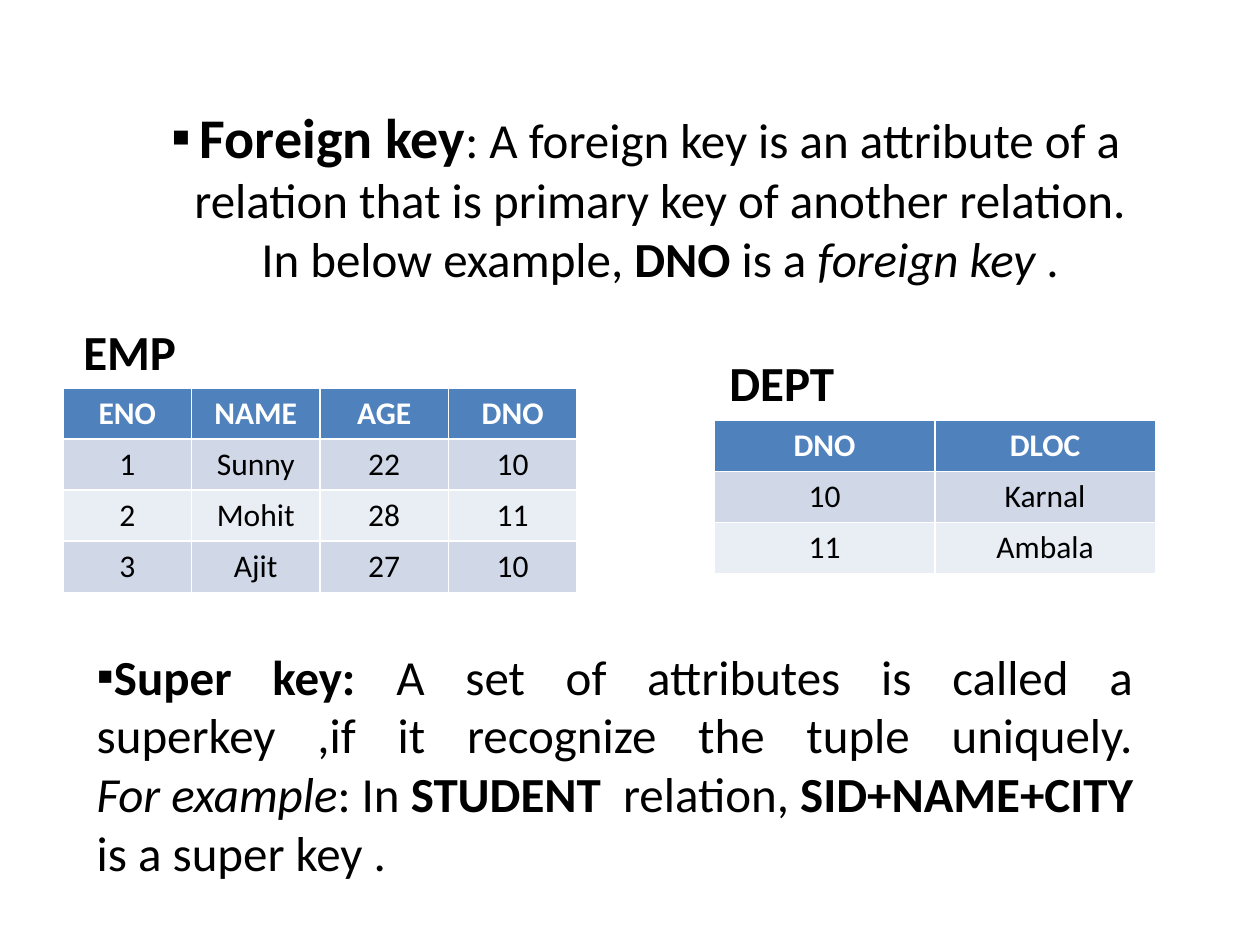
from lxml import etree
from pptx import Presentation
from pptx import util as u
from pptx.dml.color import RGBColor
from pptx.enum import text as t
from pptx.oxml.ns import qn

FONT = "Calibri"
BLACK, WHITE = "000000", "FFFFFF"
HEAD, ODD, EVEN = "4F81BD", "D0D8E8", "E9EDF4"
MID, JUST = t.PP_ALIGN.CENTER, t.PP_ALIGN.JUSTIFY


def color(code):
    return RGBColor.from_string(code)


def write(par, words, size=28, bold=False, ital=False, ink=BLACK):
    """Add words to a paragraph; a newline becomes a line break."""
    for i, line in enumerate(words.split("\n")):
        if i:
            par.add_line_break()
        if not line:
            continue
        run = par.add_run()
        run.text = line
        font = run.font
        font.name, font.size = FONT, u.Pt(size)
        font.bold, font.italic = bold, ital
        font.color.rgb = color(ink)


def bullet(par, hang=0):
    """Give a paragraph a square bullet with a hanging indent in cm."""
    props = par._p.get_or_add_pPr()
    props.set("marL", str(u.Cm(hang)))
    props.set("indent", str(-u.Cm(hang)))
    etree.SubElement(props, qn("a:buFont")).set("typeface", "Arial")
    etree.SubElement(props, qn("a:buChar")).set("char", "▪")


def prose(slide, box, parts, align=MID, anchor=t.MSO_ANCHOR.TOP, wrap=True):
    """Place one paragraph of (words, format) parts and return it."""
    frame = slide.shapes.add_textbox(*map(u.Cm, box)).text_frame
    frame.word_wrap, frame.vertical_anchor = wrap, anchor
    par = frame.paragraphs[0]
    par.alignment = align
    for words, form in parts:
        write(par, words, **form)
    return par


def grid(slide, box, rows):
    """Place a banded table with equal columns and rows."""
    left, top, width, high = box
    tall, wide = len(rows), len(rows[0])
    table = slide.shapes.add_table(tall, wide, *map(u.Cm, box)).table
    for col in table.columns:
        col.width = u.Cm(width / wide)
    for r, row in enumerate(rows):
        table.rows[r].height = u.Cm(high / tall)
        fill = HEAD if r == 0 else ODD if r % 2 else EVEN
        for c, words in enumerate(row):
            cell = table.cell(r, c)
            cell.fill.solid()
            cell.fill.fore_color.rgb = color(fill)
            par = cell.text_frame.paragraphs[0]
            par.alignment = MID
            write(par, words, size=18, bold=r == 0, ink=BLACK if r else WHITE)


def main():
    deck = Presentation()
    deck.slide_width, deck.slide_height = u.Cm(25.4), u.Cm(19.05)
    slide = deck.slides.add_slide(deck.slide_layouts[6])
    bold, ital = {"bold": True}, {"ital": True}

    # Foreign key definition
    par = prose(slide, (1.9, 1.95, 22.23, 3.97), [
        ("Foreign key", {"bold": True, "size": 32}),
        (": A foreign key is an attribute of a relation that is primary key "
         "of another relation.\nIn below example, ", {}),
        ("DNO", bold), (" is a ", {}), ("foreign key ", ital), (".", {}),
    ], anchor=t.MSO_ANCHOR.MIDDLE)
    bullet(par, 0.58)

    # Example relations
    grid(slide, (1.27, 7.82, 10.36, 4.12), [
        ("ENO", "NAME", "AGE", "DNO"),
        ("1", "Sunny", "22", "10"),
        ("2", "Mohit", "28", "11"),
        ("3", "Ajit", "27", "10"),
    ])
    grid(slide, (14.4, 8.47, 8.89, 3.09), [
        ("DNO", "DLOC"), ("10", "Karnal"), ("11", "Ambala"),
    ])
    prose(slide, (1.27, 6.35, 2.69, 1.45), [("EMP", bold)], wrap=False)
    prose(slide, (14.17, 6.99, 3.18, 1.45), [("DEPT", bold)], wrap=False)

    # Super key definition
    par = prose(slide, (1.7, 12.9, 21.39, 5.05), [
        ("Super key: ", bold),
        ("A set of attributes is called a superkey ,if it recognize the "
         "tuple uniquely.\n", {}),
        ("For example", ital), (": In ", {}), ("STUDENT", bold),
        ("  relation, ", {}), ("SID+NAME+CITY", bold),
        (" is a super key .", {}),
    ], align=JUST)
    bullet(par)

    deck.save("out.pptx")


if __name__ == "__main__":
    main()
